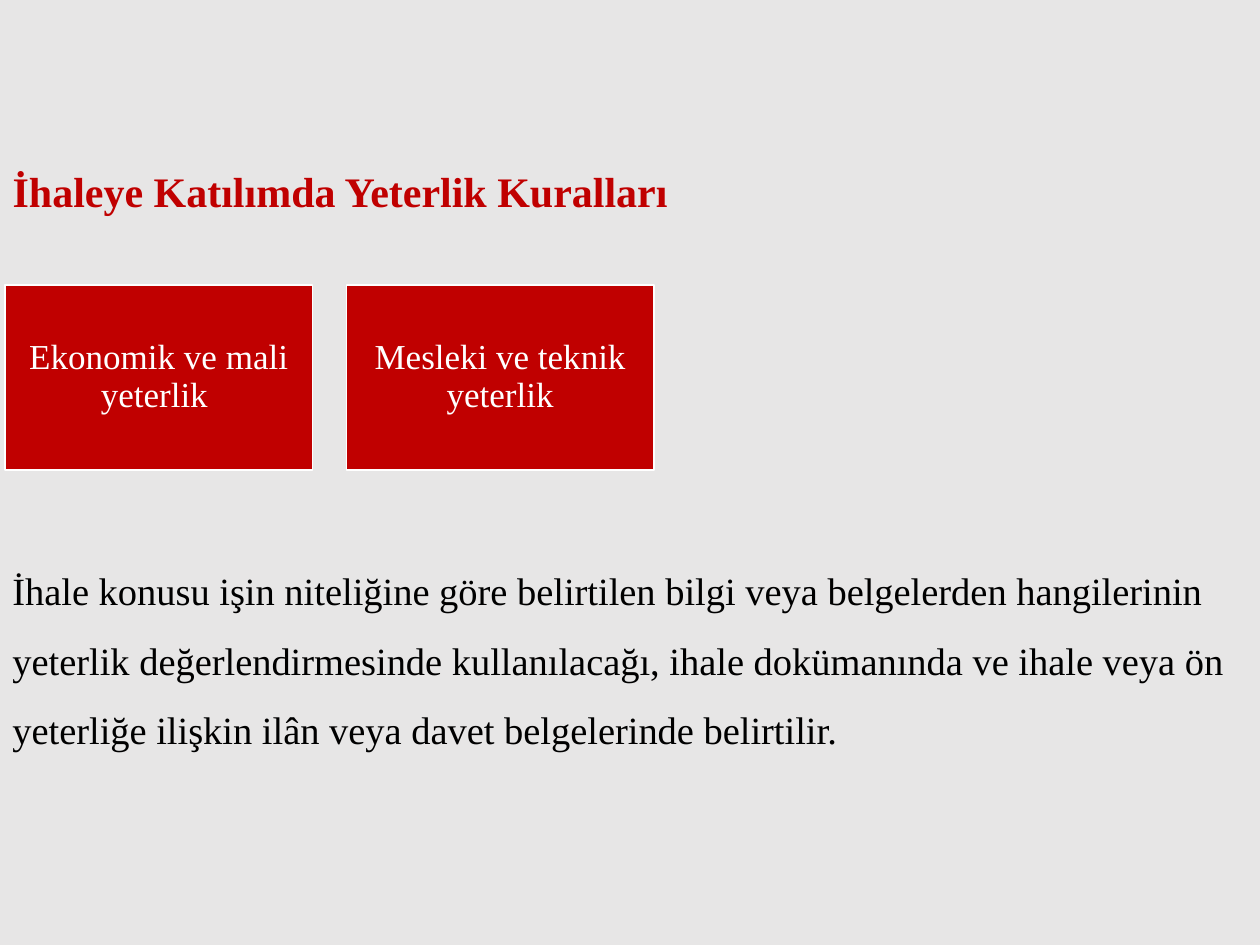
from pptx import Presentation
from pptx.dml.color import RGBColor
from pptx.enum.shapes import MSO_SHAPE
from pptx.enum.text import MSO_ANCHOR, PP_ALIGN
from pptx.util import Inches, Pt

RED, WHITE, BLACK, GREY = "C00000", "FFFFFF", "000000", "E7E6E6"

TITLE = "İhaleye Katılımda Yeterlik Kuralları"
CRITERIA = ["Ekonomik ve mali yeterlik ", "Mesleki ve teknik yeterlik"]
EXPLANATION = (
    "İhale konusu işin niteliğine göre belirtilen bilgi veya belgelerden "
    "hangilerinin yeterlik değerlendirmesinde kullanılacağı, ihale dokümanında "
    "ve ihale veya ön yeterliğe ilişkin ilân veya davet belgelerinde belirtilir."
)

TITLE_FONT = {"name": "Times New Roman", "size": Pt(24), "bold": True}
BODY_FONT = {"name": "Times New Roman", "size": Pt(22)}
BOX_FONT = {"name": "Times New Roman", "size": Pt(20)}

BOX_LEFT, BOX_TOP, BOX_STEP = 0.04, 2.26, 2.71
BOX_WIDTH, BOX_HEIGHT = 2.44, 1.47
BOX_MARGIN = 0.08


def color(hex_string):
    return RGBColor.from_string(hex_string)


def write_text(shape, text, font, text_color, alignment, line_spacing, anchor):
    frame = shape.text_frame
    frame.word_wrap = True
    frame.vertical_anchor = anchor
    paragraph = frame.paragraphs[0]
    paragraph.alignment = alignment
    paragraph.line_spacing = line_spacing
    run = paragraph.add_run()
    run.text = text
    for attribute, value in font.items():
        setattr(run.font, attribute, value)
    run.font.color.rgb = color(text_color)


def add_title(slide):
    title = slide.shapes.title
    title.left, title.top = Inches(0), Inches(1.3)
    title.width, title.height = Inches(10), Inches(0.47)
    write_text(title, TITLE, TITLE_FONT, RED, PP_ALIGN.LEFT, 0.9, MSO_ANCHOR.MIDDLE)


def add_explanation(slide):
    box = slide.shapes.add_textbox(Inches(0), Inches(4.27), Inches(10), Inches(1.41))
    write_text(box, EXPLANATION, BODY_FONT, BLACK, PP_ALIGN.LEFT, 1.5, MSO_ANCHOR.TOP)


def add_criterion(slide, index, text):
    box = slide.shapes.add_shape(
        MSO_SHAPE.RECTANGLE,
        Inches(BOX_LEFT + index * BOX_STEP), Inches(BOX_TOP),
        Inches(BOX_WIDTH), Inches(BOX_HEIGHT),
    )
    box.shadow.inherit = False
    box.fill.solid()
    box.fill.fore_color.rgb = color(RED)
    box.line.color.rgb = color(WHITE)
    box.line.width = Pt(1)
    for side in ("left", "top", "right", "bottom"):
        setattr(box.text_frame, f"margin_{side}", Inches(BOX_MARGIN))
    write_text(box, text, BOX_FONT, WHITE, PP_ALIGN.CENTER, 0.9, MSO_ANCHOR.MIDDLE)


def main():
    presentation = Presentation()
    presentation.slide_width, presentation.slide_height = Inches(10), Inches(7.5)

    # Title-only slide on a light grey background
    slide = presentation.slides.add_slide(presentation.slide_layouts[5])
    slide.background.fill.solid()
    slide.background.fill.fore_color.rgb = color(GREY)

    # Heading and explanation
    add_title(slide)
    add_explanation(slide)

    # Row of qualification criteria
    for index, text in enumerate(CRITERIA):
        add_criterion(slide, index, text)

    presentation.save("out.pptx")


if __name__ == "__main__":
    main()
